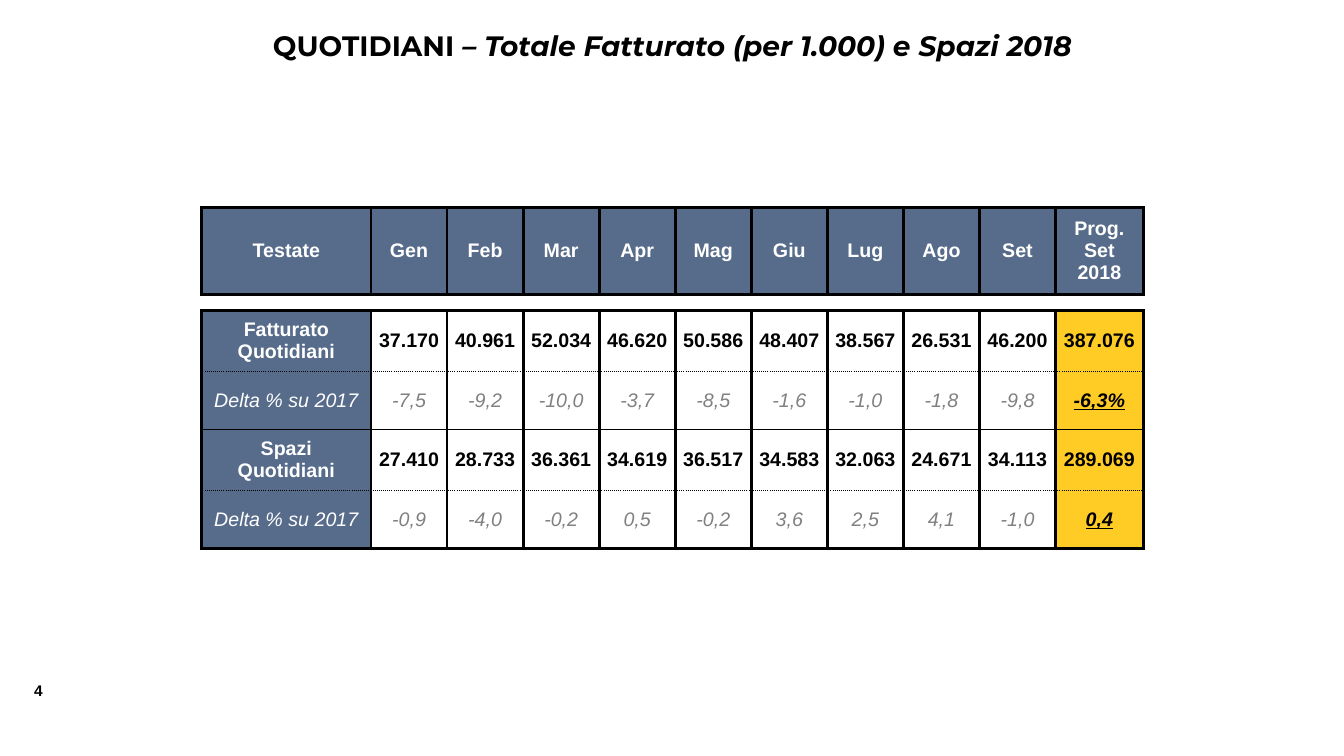
"""Build the slide on newspaper revenue and advertising space for 2018."""
from lxml.etree import SubElement
from pptx import Presentation
from pptx.dml.color import RGBColor
from pptx.enum.text import MSO_ANCHOR as Anchor, PP_ALIGN as Align
from pptx.oxml.ns import qn
from pptx.util import Inches, Pt

TITLE = [("QUOTIDIANI ", {}), ("– Totale Fatturato (per 1.000) e Spazi 2018", {"italic": True})]
PAGE_NUMBER = "4"
HEADER = ["Testate", "Gen", "Feb", "Mar", "Apr", "Mag", "Giu", "Lug", "Ago", "Set", "Prog.\nSet\n2018"]
FIGURES = [
    ["Fatturato Quotidiani", "37.170", "40.961", "52.034", "46.620", "50.586",
     "48.407", "38.567", "26.531", "46.200", "387.076"],
    ["Delta % su 2017", "-7,5", "-9,2", "-10,0", "-3,7", "-8,5", "-1,6", "-1,0", "-1,8", "-9,8", "-6,3%"],
    ["Spazi Quotidiani", "27.410", "28.733", "36.361", "34.619", "36.517",
     "34.583", "32.063", "24.671", "34.113", "289.069"],
    ["Delta % su 2017", "-0,9", "-4,0", "-0,2", "0,5", "-0,2", "3,6", "2,5", "4,1", "-1,0", "0,4"],
]
THEME = {
    "black": "000000", "white": "FFFFFF", "grey": "808080", "slate": "576B8A", "gold": "FFCB25",
    "title_font": "Montserrat", "body_font": "Arial",
    "title_size": 20, "table_size": 14, "page_size": 11, "spacer_size": 4,
}
HEAVY, THIN, DOTTED, NO_LINE = (2.25, "solid"), (1, "solid"), (1, "sysDot"), None
ROW_EDGES = [HEAVY, HEAVY, HEAVY, DOTTED, THIN, DOTTED, HEAVY]
ROW_HEIGHTS = [0.86, 0.16, 0.61, 0.57, 0.61, 0.57]
TABLE_LEFT, TABLE_TOP, TABLE_WIDTH = 2, 2.06, 9.34
LABEL_WIDTH, TOTAL_WIDTH = 1.68, 0.87


def write(frame, lines, size, color="black", font="body_font", align=Align.CENTER,
          bold=True, italic=False, underline=False):
    """Fill a text frame with lines, each a list of (text, overrides) runs."""
    for index, runs in enumerate(lines):
        paragraph = frame.paragraphs[0] if index == 0 else frame.add_paragraph()
        paragraph.alignment = align
        for text, overrides in runs:
            run = paragraph.add_run()
            run.text = text
            run.font.name = THEME[font]
            run.font.size = Pt(THEME[size])
            run.font.color.rgb = RGBColor.from_string(THEME[color])
            run.font.bold = bold
            run.font.italic = overrides.get("italic", italic)
            run.font.underline = underline


def add_label(slide, box, runs, wrap, **style):
    """Place a text box on the slide."""
    frame = slide.shapes.add_textbox(*map(Inches, box)).text_frame
    frame.word_wrap = wrap
    write(frame, [runs], **style)


def draw_borders(cell, **edges):
    """Draw the four borders of a table cell."""
    properties = cell._tc.get_or_add_tcPr()
    for side in "LRTB":
        edge = edges[side]
        line = SubElement(properties, qn("a:ln" + side))
        if edge is NO_LINE:
            line.set("w", "0")
            SubElement(line, qn("a:noFill"))
            continue
        width, dash = edge
        line.set("w", str(Pt(width)))
        SubElement(SubElement(line, qn("a:solidFill")), qn("a:srgbClr"), val=THEME["black"])
        SubElement(line, qn("a:prstDash"), val=dash)


def cell_style(is_header, is_label, is_total, is_delta):
    """Return the fill and text format that a cell's role calls for."""
    if is_header:
        return "slate", {"color": "white"}
    if is_label:
        return "slate", {"color": "white", "bold": not is_delta, "italic": is_delta}
    if is_total:
        return "gold", {"italic": is_delta, "underline": is_delta}
    return None, {"color": "grey" if is_delta else "black", "bold": not is_delta, "italic": is_delta}


def add_figures_table(slide):
    """Add the table with its header, spacer row and monthly figures."""
    rows = [HEADER, [""] * len(HEADER), *FIGURES]
    last = len(HEADER) - 1
    month_width = (TABLE_WIDTH - LABEL_WIDTH - TOTAL_WIDTH) / (last - 1)
    widths = [LABEL_WIDTH, *[month_width] * (last - 1), TOTAL_WIDTH]
    table = slide.shapes.add_table(
        len(rows), len(HEADER), Inches(TABLE_LEFT), Inches(TABLE_TOP),
        Inches(TABLE_WIDTH), Inches(sum(ROW_HEIGHTS))).table
    table.first_row = table.horz_banding = False
    for column, width in zip(table.columns, widths):
        column.width = Inches(width)
    for r, (values, height) in enumerate(zip(rows, ROW_HEIGHTS)):
        table.rows[r].height = Inches(height)
        for c, value in enumerate(values):
            cell = table.cell(r, c)
            side = HEAVY if value else NO_LINE
            draw_borders(cell, L=side, R=side, T=ROW_EDGES[r], B=ROW_EDGES[r + 1])
            cell.vertical_anchor = Anchor.MIDDLE
            padded = r == 0 or (c == 0 and value)
            cell.margin_left = cell.margin_right = Inches(0.1 if padded else 0)
            cell.margin_top = cell.margin_bottom = Inches(0.05 if padded else 0)
            if not value:
                cell.fill.background()
                SubElement(cell.text_frame.paragraphs[0]._p, qn("a:endParaRPr"),
                           sz=str(THEME["spacer_size"] * 100))
                continue
            fill, style = cell_style(r == 0, c == 0, c == last, r in (3, 5))
            if fill:
                cell.fill.solid()
                cell.fill.fore_color.rgb = RGBColor.from_string(THEME[fill])
            else:
                cell.fill.background()
            write(cell.text_frame, [[(line, {})] for line in value.split("\n")], "table_size", **style)


def main():
    """Assemble and save the slide."""
    deck = Presentation()
    deck.slide_width, deck.slide_height = Inches(13.33), Inches(7.5)
    slide = deck.slides.add_slide(deck.slide_layouts[6])
    add_label(slide, (0.24, 6.71, 0.42, 0.29), [(PAGE_NUMBER, {})], False,
              size="page_size", align=Align.LEFT)
    add_label(slide, (1.67, 0.23, 10, 0.44), TITLE, True, size="title_size", font="title_font")
    add_figures_table(slide)
    deck.save("out.pptx")


if __name__ == "__main__":
    main()
